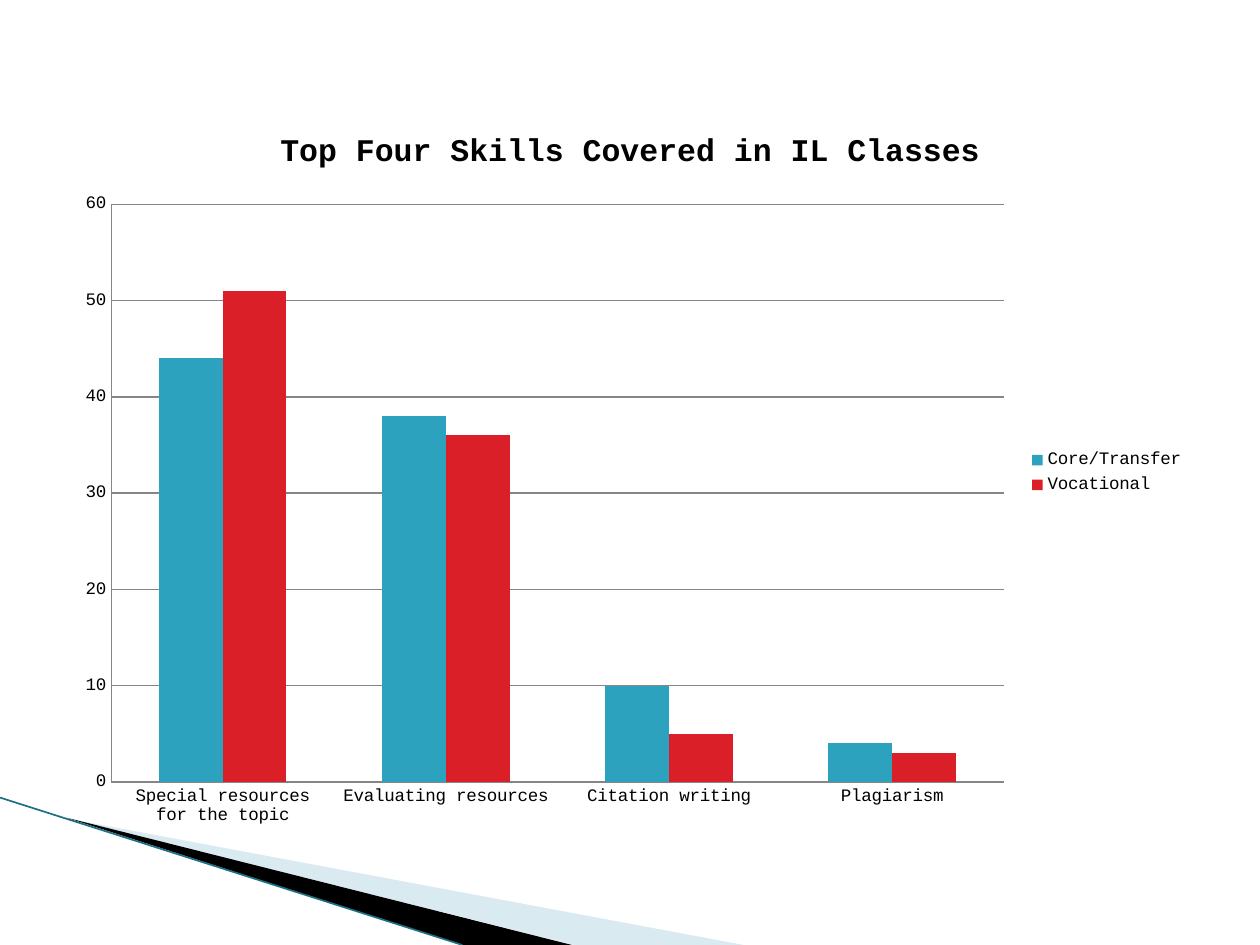
from lxml import etree
from pptx import Presentation
from pptx.chart.data import CategoryChartData
from pptx.dml.color import RGBColor
from pptx.enum.chart import XL_CHART_TYPE, XL_LEGEND_POSITION, XL_TICK_MARK
from pptx.enum.shapes import MSO_CONNECTOR
from pptx.oxml.ns import qn
from pptx.util import Inches, Pt

COLUMNS = XL_CHART_TYPE.COLUMN_CLUSTERED
RIGHT = XL_LEGEND_POSITION.RIGHT
NO_TICK = XL_TICK_MARK.NONE
STRAIGHT = MSO_CONNECTOR.STRAIGHT

THEME = {
    "font": "Courier New", "title": 18, "label": 10,
    "text": "000000", "grid": "868686",
    "core": "2DA2BF", "vocational": "DA1F28",
    "pale": "A0CBDC", "dark": "000000", "edge": "1C7085",
}


def rgb(name):
    return RGBColor.from_string(THEME[name])


def write(tf, text, size="label", color="text", bold=False):
    r = tf.paragraphs[0].add_run()
    r.text = text
    r.font.name = THEME["font"]
    r.font.size = Pt(THEME[size])
    r.font.color.rgb = rgb(color)
    r.font.bold = bold


prs = Presentation()
prs.slide_width, prs.slide_height = Inches(10), Inches(7.5)
W, H = prs.slide_width, prs.slide_height
s = prs.slides.add_slide(prs.slide_layouts[6])

# Corner wedges, inches from the top left
wedges = [
    ("pale", 40, [(0.55, 6.5), (5.9, 7.5), (4.56, 7.5)]),
    ("dark", 100, [(0.53, 6.49), (4.54, 7.5), (3.67, 7.5)]),
]
for color, opacity, points in wedges:
    points = [(Inches(x), Inches(y)) for x, y in points]
    fb = s.shapes.build_freeform(*points[0], scale=1.0)
    fb.add_line_segments(points[1:], close=True)
    sp = fb.convert_to_shape()
    sp.shadow.inherit = False
    sp.fill.solid()
    sp.fill.fore_color.rgb = rgb(color)
    sp.line.fill.background()
    if opacity < 100:
        clr = sp._element.spPr.find(".//" + qn("a:srgbClr"))
        etree.SubElement(clr, qn("a:alpha"), val=str(opacity * 1000))

# Edge line under the wedges
edge = s.shapes.add_connector(STRAIGHT, 0, Inches(6.33), Inches(3.67), H)
edge.line.color.rgb = rgb("edge")
edge.line.width = Pt(0.95)
etree.SubElement(edge._element.spPr, qn("a:effectLst"))

# Chart data
data = CategoryChartData()
data.categories = ["Special resources for the topic", "Evaluating resources",
                   "Citation writing", "Plagiarism"]
data.add_series("Core/Transfer", [44, 38, 10, 4])
data.add_series("Vocational", [51, 36, 5, 3])

# Chart, centred across the slide
chart = s.shapes.add_chart(COLUMNS, int(W * 0.05), int(H * 0.11),
                           int(W * 0.9), int(H * 0.78), data).chart
chart.font.name = THEME["font"]
chart.font.size = Pt(THEME["label"])
chart.font.color.rgb = rgb("text")
chart.has_title = True
write(chart.chart_title.text_frame, "Top Four Skills Covered in IL Classes",
      size="title", bold=True)
chart.chart_title.include_in_layout = False
chart.has_legend = True
chart.legend.position = RIGHT
chart.legend.include_in_layout = False

# Columns
plot = chart.plots[0]
plot.gap_width = 150
plot.overlap = 0
plot.vary_by_categories = False
for series, color in zip(plot.series, ("core", "vocational")):
    series.format.fill.solid()
    series.format.fill.fore_color.rgb = rgb(color)

# Axes and gridlines
values = chart.value_axis
values.minimum_scale, values.maximum_scale, values.major_unit = 0, 60, 10
values.has_major_gridlines = True
for axis in (chart.category_axis, values):
    axis.major_tick_mark = axis.minor_tick_mark = NO_TICK
for part in (chart.category_axis, values, values.major_gridlines):
    part.format.line.color.rgb = rgb("grid")
    part.format.line.width = Pt(0.75)

prs.save("out.pptx")
